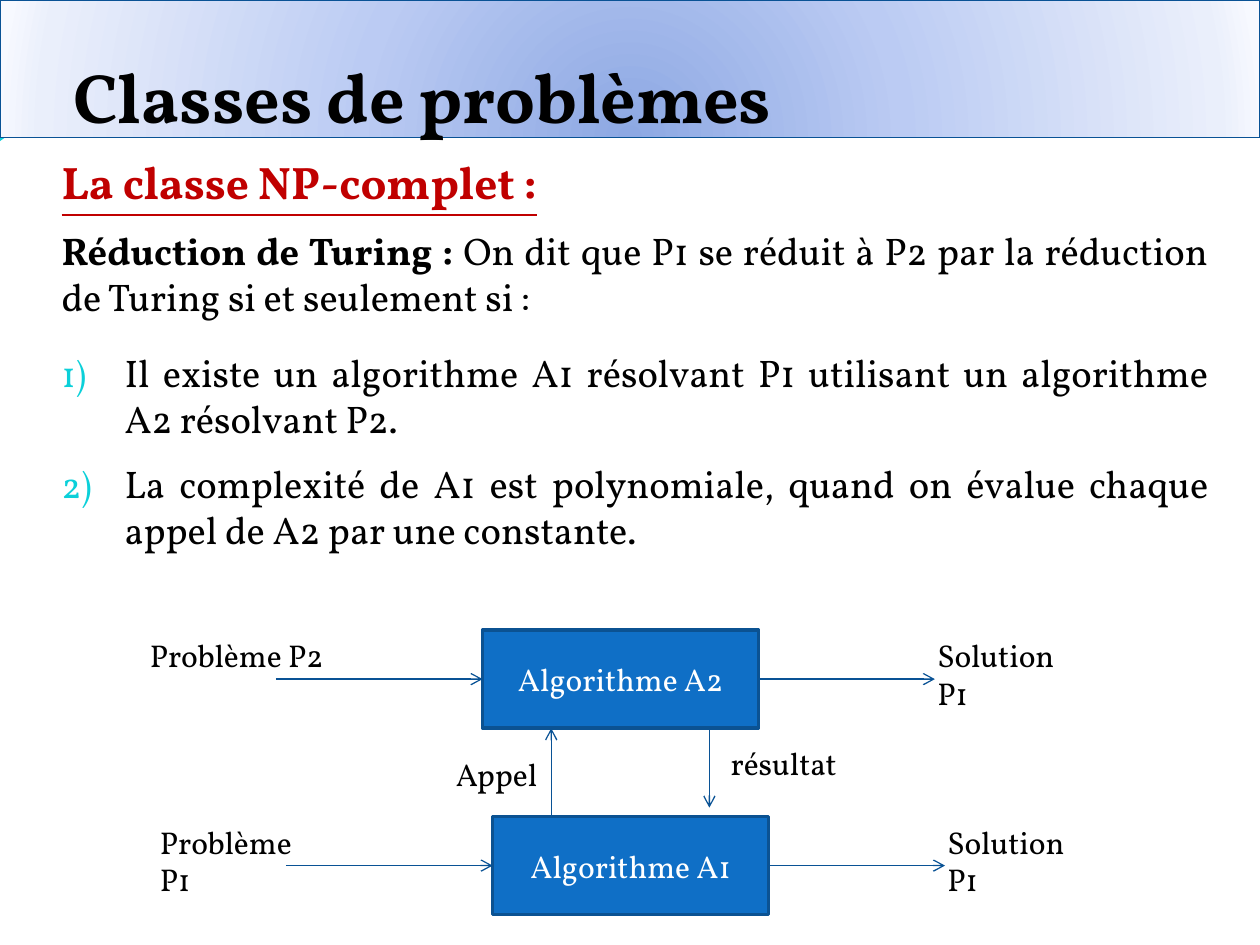
from pptx import Presentation
from pptx.dml.color import RGBColor
from pptx.enum.shapes import MSO_CONNECTOR, MSO_SHAPE
from pptx.enum.text import MSO_ANCHOR, PP_ALIGN
from pptx.oxml import parse_xml
from pptx.oxml.ns import nsdecls, qn
from pptx.util import Inches, Pt

RECTANGLE, STRAIGHT = MSO_SHAPE.RECTANGLE, MSO_CONNECTOR.STRAIGHT
LEFT, CENTER, JUSTIFY = PP_ALIGN.LEFT, PP_ALIGN.CENTER, PP_ALIGN.JUSTIFY
TOP, MIDDLE, BOTTOM = MSO_ANCHOR.TOP, MSO_ANCHOR.MIDDLE, MSO_ANCHOR.BOTTOM

FONT = "Vollkorn"
BLACK, WHITE = RGBColor(0, 0, 0), RGBColor(255, 255, 255)
RED, TEAL = RGBColor(0xC0, 0, 0), RGBColor(0x0B, 0xD0, 0xD9)
BLUE, EDGE = RGBColor(0x0F, 0x6F, 0xC6), RGBColor(0x0B, 0x52, 0x92)
LINE = RGBColor(0x09, 0x52, 0x95)
HEADER_STOPS = [(0, "8DA8E3"), (43, "BBCBF3"), (93, "EAEFFB"), (100, "F7F9FF")]

# Content
TITLE = "Classes de problèmes"
HEADING = {"size": Pt(26), "bold": True, "underline": True, "color": RED}
STRONG = {"size": Pt(22), "bold": True, "color": BLACK}
PLAIN = {"size": Pt(22), "color": BLACK}
LABEL = {"size": Pt(18), "color": BLACK}
# Each paragraph: spans, space after in points, numbered
BODY = [
    ([("La classe NP-complet :", HEADING)], 6, False),
    ([("Réduction de Turing : ", STRONG),
      ("On dit que P1 se réduit à P2 par la réduction de Turing "
       "si et seulement si :", PLAIN)], 12, False),
    ([("Il existe un algorithme A1 résolvant P1 utilisant un algorithme "
       "A2 résolvant P2.", PLAIN)], 6, True),
    ([("La complexité de A1 est polynomiale, quand on évalue chaque appel "
       "de A2 par une constante.", PLAIN)], 12, True),
]
# Each row: left shift, top, input with its width, algorithm, output
ROWS = [
    (0, 5, "Problème P2", 1.58, "Algorithme A2", "Solution P1"),
    (0.08, 6.48, "Problème P1", 1.53, "Algorithme A1", "Solution P1"),
]
CALLS = [("Appel", 3.52, 5.94, 1.02), ("résultat", 5.7, 5.86, 1.48)]
CALL_ARROWS = [(4.375, 6.48, 4.375, 5.78), (5.63, 5.78, 5.63, 6.41)]
BOX_LEFT, BOX_WIDTH, BOX_HEIGHT = 3.83, 2.19, 0.78


def add_span(para, text, style):
    span = para.add_run()
    span.text = text
    span.font.name = FONT
    for name, value in style.items():
        if name == "color":
            span.font.color.rgb = value
        else:
            setattr(span.font, name, value)


def add_rectangle(page, left, top, width, height, line, weight):
    box = page.shapes.add_shape(RECTANGLE, *map(Inches, (left, top, width, height)))
    box.shadow.inherit = False
    box.line.color.rgb = line
    box.line.width = Pt(weight)
    return box


def add_text(page, left, top, width, height):
    box = page.shapes.add_textbox(*map(Inches, (left, top, width, height)))
    box.text_frame.word_wrap = True
    return box.text_frame


def add_label(page, text, left, top, width):
    add_span(add_text(page, left, top, width, 0.4).paragraphs[0], text, LABEL)


def add_arrow(page, *ends):
    arrow = page.shapes.add_connector(STRAIGHT, *map(Inches, ends))
    arrow.line.color.rgb = LINE
    arrow.line.width = Pt(0.75)
    arrow.line._get_or_add_ln().append(
        parse_xml(f'<a:tailEnd {nsdecls("a")} type="arrow"/>'))
    arrow._element.spPr.append(parse_xml(f'<a:effectLst {nsdecls("a")}/>'))


def add_corner(page):
    # Teal sliver that shows below the header
    builder = page.shapes.build_freeform(0, Inches(1.05))
    builder.add_line_segments([(Inches(0.1), Inches(1.05)), (0, Inches(1.12))])
    corner = builder.convert_to_shape()
    corner.shadow.inherit = False
    corner.fill.solid()
    corner.fill.fore_color.rgb = TEAL
    corner.line.fill.background()


def add_header(page):
    header = add_rectangle(page, 0, 0, 10, 1.09, LINE, 0.75)
    stops = "".join(f'<a:gs pos="{place * 1000}"><a:srgbClr val="{color}"/></a:gs>'
                    for place, color in HEADER_STOPS)
    gradient = parse_xml(
        f'<a:gradFill {nsdecls("a")}><a:gsLst>{stops}</a:gsLst><a:path path="circle">'
        '<a:fillToRect l="50000" t="130000" r="50000" b="-30000"/></a:path></a:gradFill>')
    header._element.spPr.find(qn("a:prstGeom")).addnext(gradient)
    frame = header.text_frame
    layout = {"vertical_anchor": BOTTOM, "word_wrap": True, "margin_left": 0,
              "margin_top": Inches(0.05), "margin_right": 0, "margin_bottom": 0}
    for name, value in layout.items():
        setattr(frame, name, value)
    para = frame.paragraphs[0]
    para.alignment = LEFT
    para.line_spacing = 1.5
    para._p.get_or_add_pPr().set("indent", str(Inches(0.58)))
    add_span(para, TITLE, {"size": Pt(40), "bold": True, "color": BLACK})


def add_number(para):
    properties = para._p.get_or_add_pPr()
    properties.set("marL", str(Inches(0.5)))
    properties.set("indent", str(-Inches(0.5)))
    for tag in (f'<a:buClr {nsdecls("a")}><a:srgbClr val="{TEAL}"/></a:buClr>',
                f'<a:buSzPct {nsdecls("a")} val="95000"/>',
                f'<a:buFont {nsdecls("a")} typeface="{FONT}"/>',
                f'<a:buAutoNum {nsdecls("a")} type="arabicParenR"/>'):
        properties.append(parse_xml(tag))


def add_body(page):
    frame = add_text(page, 0.39, 1.17, 9.3, 3.6)
    frame.vertical_anchor = TOP
    for index, (spans, after, numbered) in enumerate(BODY):
        para = frame.add_paragraph() if index else frame.paragraphs[0]
        para.alignment = JUSTIFY
        para.space_before, para.space_after = Pt(4.8), Pt(after)
        if numbered:
            add_number(para)
        for text, style in spans:
            add_span(para, text, style)


def add_row(page, shift, top, source, source_width, algorithm, result):
    left = BOX_LEFT + shift
    right, middle = left + BOX_WIDTH, top + BOX_HEIGHT / 2
    box = add_rectangle(page, left, top, BOX_WIDTH, BOX_HEIGHT, EDGE, 2)
    box.fill.solid()
    box.fill.fore_color.rgb = BLUE
    box.text_frame.vertical_anchor = MIDDLE
    para = box.text_frame.paragraphs[0]
    para.alignment = CENTER
    add_span(para, algorithm, {"size": Pt(18), "color": WHITE})
    add_arrow(page, left - 1.64, middle, left, middle)
    add_arrow(page, right, middle, right + 1.4, middle)
    add_label(page, source, 1.09 + shift, top, source_width)
    add_label(page, result, right + 1.32, top, 1.41)


def main():
    deck = Presentation()
    deck.slide_width, deck.slide_height = Inches(10), Inches(7.5)
    page = deck.slides.add_slide(deck.slide_layouts[6])
    add_corner(page)
    add_body(page)
    add_header(page)
    # Reduction diagram
    for row in ROWS:
        add_row(page, *row)
    for ends in CALL_ARROWS:
        add_arrow(page, *ends)
    for call in CALLS:
        add_label(page, *call)
    deck.save("out.pptx")


if __name__ == "__main__":
    main()
